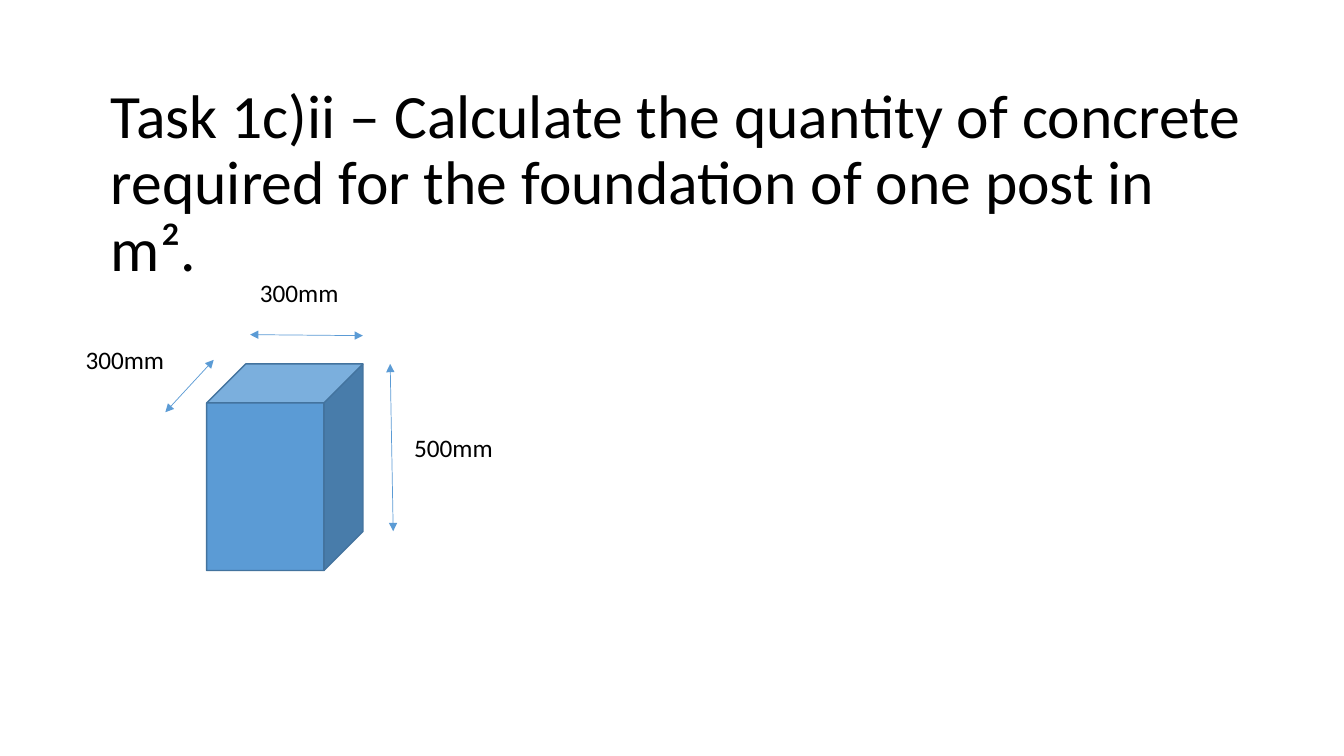
import pptx
import pptx.util
import pptx.dml.color
import pptx.enum.shapes
import pptx.enum.text
import pptx.oxml
import pptx.oxml.ns
from lxml import etree

Inches = pptx.util.Inches
Pt = pptx.util.Pt
BLACK = pptx.dml.color.RGBColor(0x00, 0x00, 0x00)
BLUE = pptx.dml.color.RGBColor(0x5B, 0x9B, 0xD5)
DARK_BLUE = pptx.dml.color.RGBColor(0x43, 0x73, 0x9E)

TITLE = ("Task 1c)ii – Calculate the quantity of concrete required "
         "for the foundation of one post in m².")

# Arrow start and end, label box and label, all offset from the block's corner
DIMENSIONS = [
    ((0.43, -0.29), (1.55, -0.28), (0.43, -0.91, 1.12, 0.4), "300mm"),
    ((1.82, 0), (1.85, 1.66), (1.96, 0.63, 0.98, 0.4), "500mm"),
    ((0.07, -0.04), (-0.41, 0.48), (-1.3, -0.24, 1.13, 0.4), "300mm"),
]


def format_font(font, size):
    for name, value in {"name": "Calibri", "size": Pt(size)}.items():
        setattr(font, name, value)
    font.color.rgb = BLACK


def place_title(slide, left, top, width, height):
    title = slide.shapes.title
    box = {"left": left, "top": top, "width": width, "height": height}
    for side, length in box.items():
        setattr(title, side, Inches(length))
    frame = title.text_frame
    frame.text = TITLE
    frame_format = {
        "word_wrap": True,
        "auto_size": pptx.enum.text.MSO_AUTO_SIZE.NONE,
        "vertical_anchor": pptx.enum.text.MSO_ANCHOR.MIDDLE,
    }
    for name, value in frame_format.items():
        setattr(frame, name, value)
    paragraph = frame.paragraphs[0]
    paragraph.alignment = pptx.enum.text.PP_ALIGN.LEFT
    paragraph.line_spacing = 0.9
    format_font(paragraph.runs[0].font, 44)


def add_dimension_arrow(slide, start, end):
    """Draw a thin line with a triangle at each end."""
    arrow = slide.shapes.add_connector(
        pptx.enum.shapes.MSO_CONNECTOR.STRAIGHT,
        *(Inches(length) for length in (*start, *end)))
    arrow.line.color.rgb = BLUE
    arrow.line.width = Pt(0.5)
    outline = arrow.line._get_or_add_ln()
    for tip in ("a:headEnd", "a:tailEnd"):
        etree.SubElement(outline, pptx.oxml.ns.qn(tip), type="triangle")
    etree.SubElement(arrow._element.spPr, pptx.oxml.ns.qn("a:effectLst"))


def add_dimension_label(slide, left, top, width, height, label):
    label_box = slide.shapes.add_textbox(
        *(Inches(length) for length in (left, top, width, height)))
    frame = label_box.text_frame
    frame.word_wrap = True
    frame.auto_size = pptx.enum.text.MSO_AUTO_SIZE.SHAPE_TO_FIT_TEXT
    frame.text = label
    format_font(frame.paragraphs[0].runs[0].font, 18)


def draw_foundation(slide, left, top, width, height):
    """Draw the concrete block with its three dimensions."""
    block = slide.shapes.add_shape(
        pptx.enum.shapes.MSO_SHAPE.CUBE,
        *(Inches(length) for length in (left, top, width, height)))
    block.shadow.inherit = False
    block.fill.solid()
    block.fill.fore_color.rgb = BLUE
    block.line.color.rgb = DARK_BLUE
    block.line.width = Pt(1)

    for start, end, _, _ in DIMENSIONS:
        add_dimension_arrow(slide, (left + start[0], top + start[1]),
                            (left + end[0], top + end[1]))
    for _, _, (x, y, label_width, label_height), label in DIMENSIONS:
        add_dimension_label(slide, left + x, top + y,
                            label_width, label_height, label)


def main():
    presentation = pptx.Presentation()
    presentation.slide_width = Inches(13.33)
    presentation.slide_height = Inches(7.5)
    title_only = presentation.slide_layouts[5]
    slide = presentation.slides.add_slide(title_only)
    place_title(slide, 1, 1.11, 11.5, 1.45)
    draw_foundation(slide, 2.05, 3.61, 1.55, 2.05)
    presentation.save("out.pptx")


if __name__ == "__main__":
    main()
